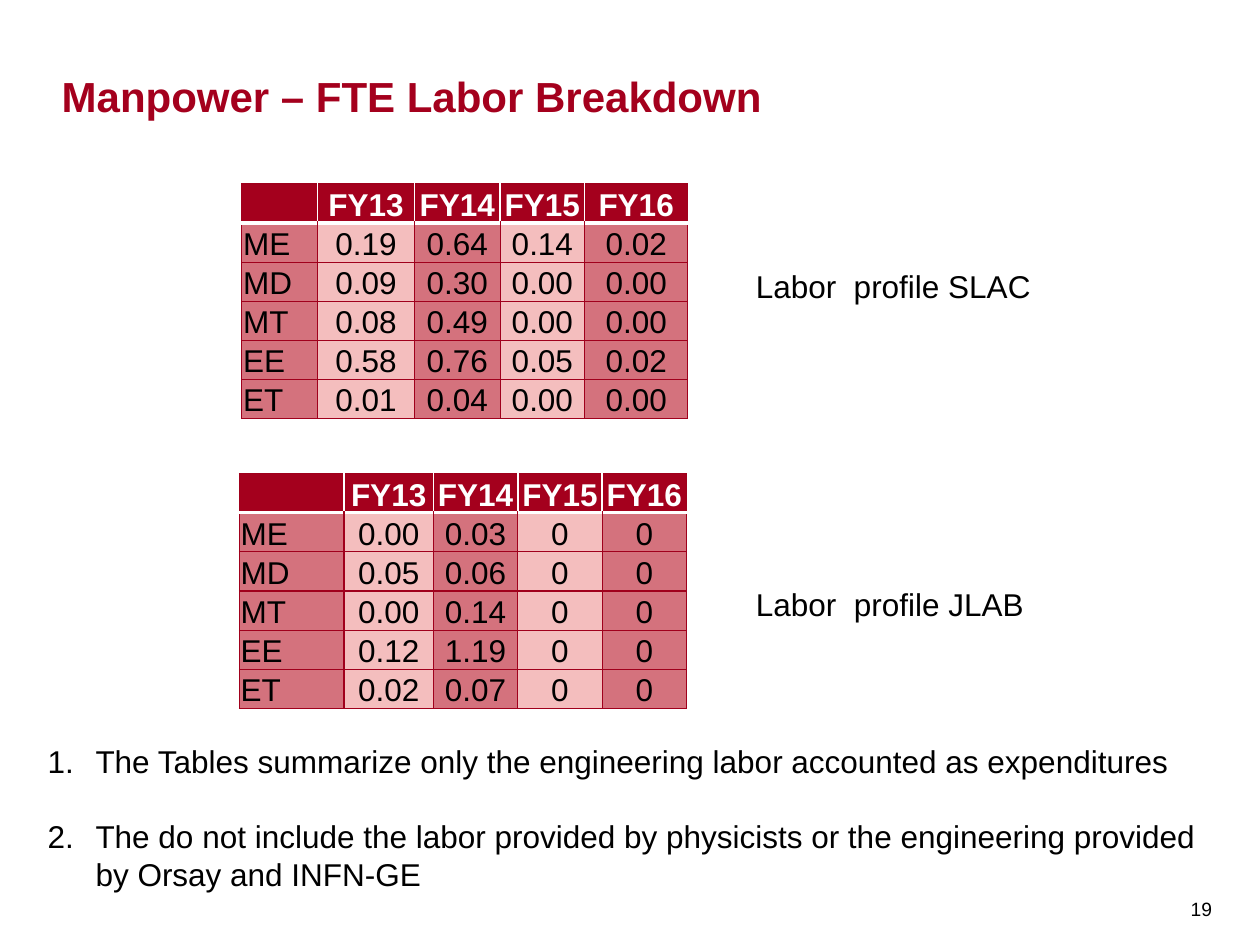
import pptx
import pptx.dml.color
import pptx.enum.text
import pptx.util
import lxml.etree
from pptx.oxml.ns import qn

Inches = pptx.util.Inches
Pt = pptx.util.Pt
RGBColor = pptx.dml.color.RGBColor
Anchor = pptx.enum.text.MSO_ANCHOR
Align = pptx.enum.text.PP_ALIGN

CRIMSON = RGBColor(0xA4, 0x00, 0x1D)
BORDER = RGBColor(0xA0, 0x00, 0x1C)
ROSE = RGBColor(0xD4, 0x72, 0x7D)
PINK = RGBColor(0xF4, 0xBE, 0xBE)
WHITE = RGBColor(0xFF, 0xFF, 0xFF)
BLACK = RGBColor(0x00, 0x00, 0x00)

HEADER = ["", "FY13", "FY14", "FY15", "FY16"]
SLAC_ROWS = [
    HEADER,
    ["ME", "0.19", "0.64", "0.14", "0.02"],
    ["MD", "0.09", "0.30", "0.00", "0.00"],
    ["MT", "0.08", "0.49", "0.00", "0.00"],
    ["EE", "0.58", "0.76", "0.05", "0.02"],
    ["ET", "0.01", "0.04", "0.00", "0.00"],
]
JLAB_ROWS = [
    HEADER,
    ["ME", "0.00", "0.03", "0", "0"],
    ["MD", "0.05", "0.06", "0", "0"],
    ["MT", "0.00", "0.14", "0", "0"],
    ["EE", "0.12", "1.19", "0", "0"],
    ["ET", "0.02", "0.07", "0", "0"],
]
NOTES = [
    "The Tables summarize only the engineering labor accounted as expenditures",
    "The do not include the labor provided by physicists or the engineering "
    "provided by Orsay and INFN-GE",
]


def style_font(font, size, color=BLACK, bold=False):
    font.name = "Arial"
    font.size = Pt(size)
    font.color.rgb = color
    font.bold = bold


def set_margins(target, left, top, right, bottom):
    target.margin_left = Inches(left)
    target.margin_top = Inches(top)
    target.margin_right = Inches(right)
    target.margin_bottom = Inches(bottom)


def add_text(page, place, text, size=18, color=BLACK, bold=False,
             anchor=Anchor.TOP, margins=(0.1, 0.05, 0.1, 0.05), wrap=False):
    box = page.shapes.add_textbox(*[Inches(value) for value in place])
    frame = box.text_frame
    frame.word_wrap = wrap
    frame.vertical_anchor = anchor
    set_margins(frame, *margins)
    frame.text = text
    for para in frame.paragraphs:
        for span in para.runs:
            style_font(span.font, size, color, bold)
    return frame


def add_notes(page):
    frame = add_text(page, (0.28, 5.84, 9.59, 1.31), "\n".join(NOTES), wrap=True)
    for index, para in enumerate(frame.paragraphs):
        properties = para._p.get_or_add_pPr()
        properties.set("marL", str(Inches(0.38)))
        properties.set("indent", str(Inches(-0.38)))
        lxml.etree.SubElement(properties, qn("a:buFont"), typeface="+mj-lt")
        lxml.etree.SubElement(properties, qn("a:buAutoNum"), type="arabicPeriod")
        if index:
            para.space_before = Pt(21.5)


def add_border(cell, side, color, width):
    line = lxml.etree.SubElement(
        cell._tc.get_or_add_tcPr(), qn("a:" + side), w=str(Pt(width)))
    fill = lxml.etree.SubElement(line, qn("a:solidFill"))
    lxml.etree.SubElement(fill, qn("a:srgbClr"), val=str(color))


def style_cell(cell, text, row, column, last_column):
    header = row == 0
    cell.text = text
    cell.vertical_anchor = Anchor.BOTTOM
    set_margins(cell, 0.01, 0.01, 0.01, 0)
    para = cell.text_frame.paragraphs[0]
    para.alignment = Align.CENTER if column else Align.LEFT
    style_font(para.font, 18)
    for span in para.runs:
        style_font(span.font, 18, WHITE if header else BLACK, header)
    if not header or column == 0:
        add_border(cell, "lnL", BORDER, 0.75)
    if not header or column == last_column:
        add_border(cell, "lnR", BORDER, 0.75)
    if row == 1:
        add_border(cell, "lnT", WHITE, 2)
    else:
        add_border(cell, "lnT", BORDER, 0.75)
    if header:
        add_border(cell, "lnB", WHITE, 2)
    else:
        add_border(cell, "lnB", BORDER, 0.75)
    cell.fill.solid()
    cell.fill.fore_color.rgb = CRIMSON if header else PINK if column % 2 else ROSE


def add_labor_table(page, left, top, widths, rows):
    frame = page.shapes.add_table(
        len(rows), len(widths), Inches(left), Inches(top),
        Inches(sum(widths)), Inches(0.31 * len(rows)))
    table = frame.table
    for column, width in zip(table.columns, widths):
        column.width = Inches(width)
    for row, values in enumerate(rows):
        for column, text in enumerate(values):
            style_cell(table.cell(row, column), text, row, column, len(widths) - 1)


def main():
    deck = pptx.Presentation()
    deck.slide_width = Inches(10)
    deck.slide_height = Inches(7.5)
    page = deck.slides.add_slide(deck.slide_layouts[6])
    add_text(page, (9.37, 6.91, 0.35, 0.59), "19", size=11,
             anchor=Anchor.MIDDLE, margins=(0.08, 0.06, 0.08, 0.05), wrap=True)
    add_text(page, (0.49, 0.14, 8.86, 0.82), "Manpower – FTE Labor Breakdown",
             size=24, color=CRIMSON, bold=True, anchor=Anchor.BOTTOM,
             margins=(0, 0, 0, 0), wrap=True)
    add_text(page, (5.9, 2.07, 2.4, 0.4), "Labor  profile SLAC")
    add_text(page, (5.9, 4.59, 2.35, 0.4), "Labor  profile JLAB")
    add_labor_table(page, 1.92, 1.46, [0.6, 0.77, 0.68, 0.67, 0.82], SLAC_ROWS)
    add_labor_table(page, 1.9, 3.76, [0.83, 0.71, 0.67, 0.67, 0.67], JLAB_ROWS)
    add_notes(page)
    deck.save("out.pptx")


if __name__ == "__main__":
    main()
